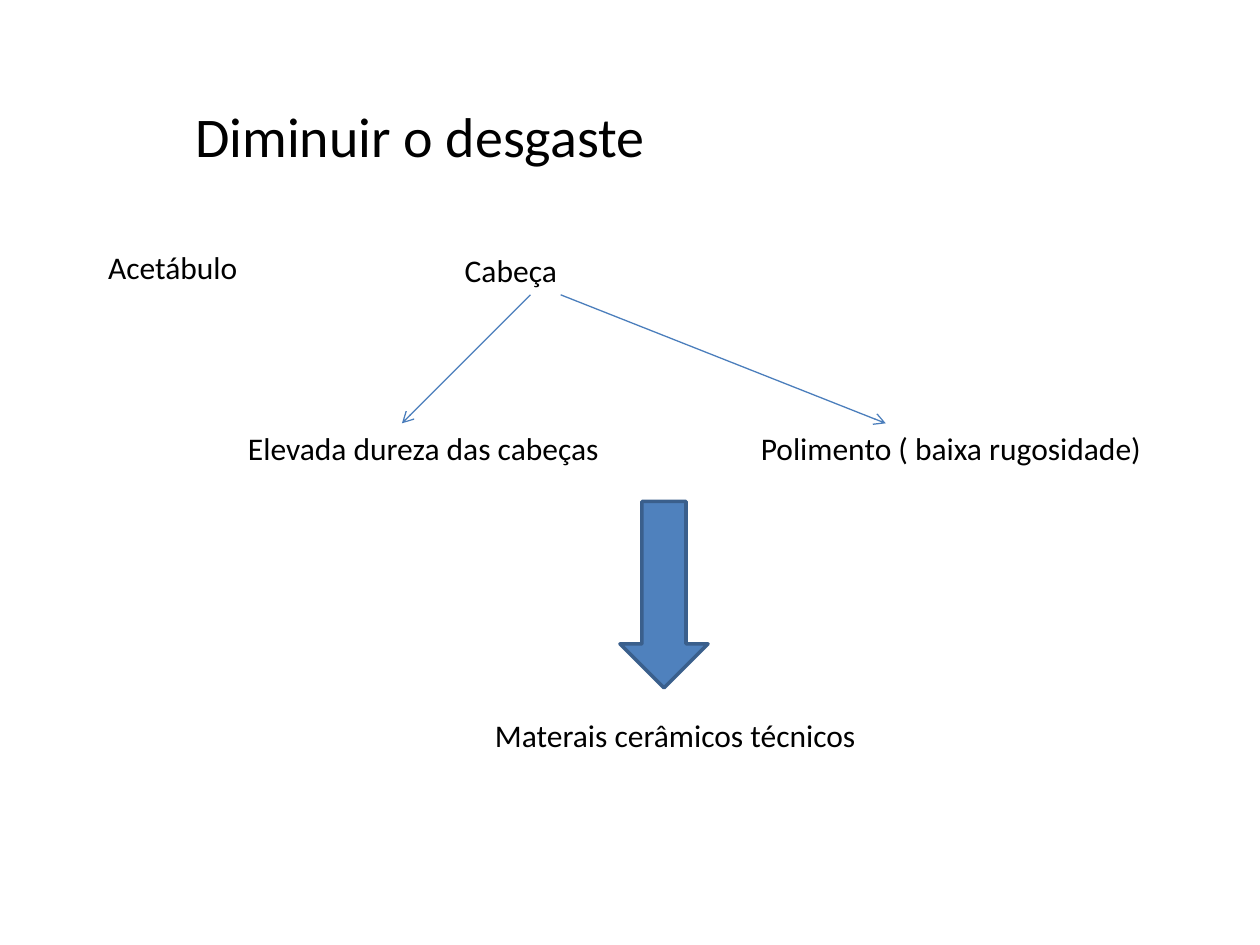
from lxml import etree
from pptx import Presentation
from pptx.dml.color import RGBColor
from pptx.enum.shapes import MSO_CONNECTOR, MSO_SHAPE
from pptx.oxml.ns import qn
from pptx.util import Inches, Pt

STRAIGHT = MSO_CONNECTOR.STRAIGHT
DOWN_ARROW = MSO_SHAPE.DOWN_ARROW

FONT = "Calibri"
COLORS = {
    "text": "000000",
    "arrow_fill": "4F81BD",
    "arrow_edge": "3A5F8C",
    "branch": "4B7EBC",
}

# text, (left, top, width, height), size
LABELS = [
    ("Diminuir o desgaste", (1.45, 0.76, 4.3, 0.67), 32),
    ("Acetábulo", (0.76, 1.92, 2.2, 0.4), 18),
    ("Cabeça", (3.59, 1.94, 2.2, 0.4), 18),
    ("Elevada dureza das cabeças", (1.87, 3.36, 3.44, 0.4), 18),
    ("Polimento ( baixa rugosidade)", (5.94, 3.36, 3.44, 0.4), 18),
    ("Materais cerâmicos técnicos", (3.83, 5.63, 3.2, 0.4), 18),
]
RESULT_ARROW = (4.92, 3.98, 0.7, 1.48)

# Branches run from "Cabeça" down to its two requirements
BRANCH_TOP, BRANCH_BOTTOM = 2.34, 3.36
BRANCHES = [(4.21, 3.19), (4.45, 7.03)]


def color(name):
    return RGBColor.from_string(COLORS[name])


def add_label(slide, text, box, size):
    frame = slide.shapes.add_textbox(*map(Inches, box)).text_frame
    frame.word_wrap = True
    paragraph = frame.paragraphs[0]
    paragraph.text = text
    paragraph.font.name = FONT
    paragraph.font.size = Pt(size)
    paragraph.font.color.rgb = color("text")


def add_result_arrow(slide):
    arrow = slide.shapes.add_shape(DOWN_ARROW, *map(Inches, RESULT_ARROW))
    arrow.shadow.inherit = False
    arrow.fill.solid()
    arrow.fill.fore_color.rgb = color("arrow_fill")
    arrow.line.color.rgb = color("arrow_edge")
    arrow.line.width = Pt(2)


def add_branch(slide, start_x, end_x):
    ends = (start_x, BRANCH_TOP, end_x, BRANCH_BOTTOM)
    branch = slide.shapes.add_connector(STRAIGHT, *map(Inches, ends))
    branch.line.color.rgb = color("branch")
    branch.line.width = Pt(0.75)
    etree.SubElement(branch.line._get_or_add_ln(), qn("a:tailEnd"), type="arrow")
    etree.SubElement(branch._element.spPr, qn("a:effectLst"))


def main():
    prs = Presentation()
    prs.slide_width, prs.slide_height = Inches(10), Inches(7.5)
    slide = prs.slides.add_slide(prs.slide_layouts[6])
    for label in LABELS:
        add_label(slide, *label)
    add_result_arrow(slide)
    for branch in BRANCHES:
        add_branch(slide, *branch)
    prs.save("out.pptx")


if __name__ == "__main__":
    main()
